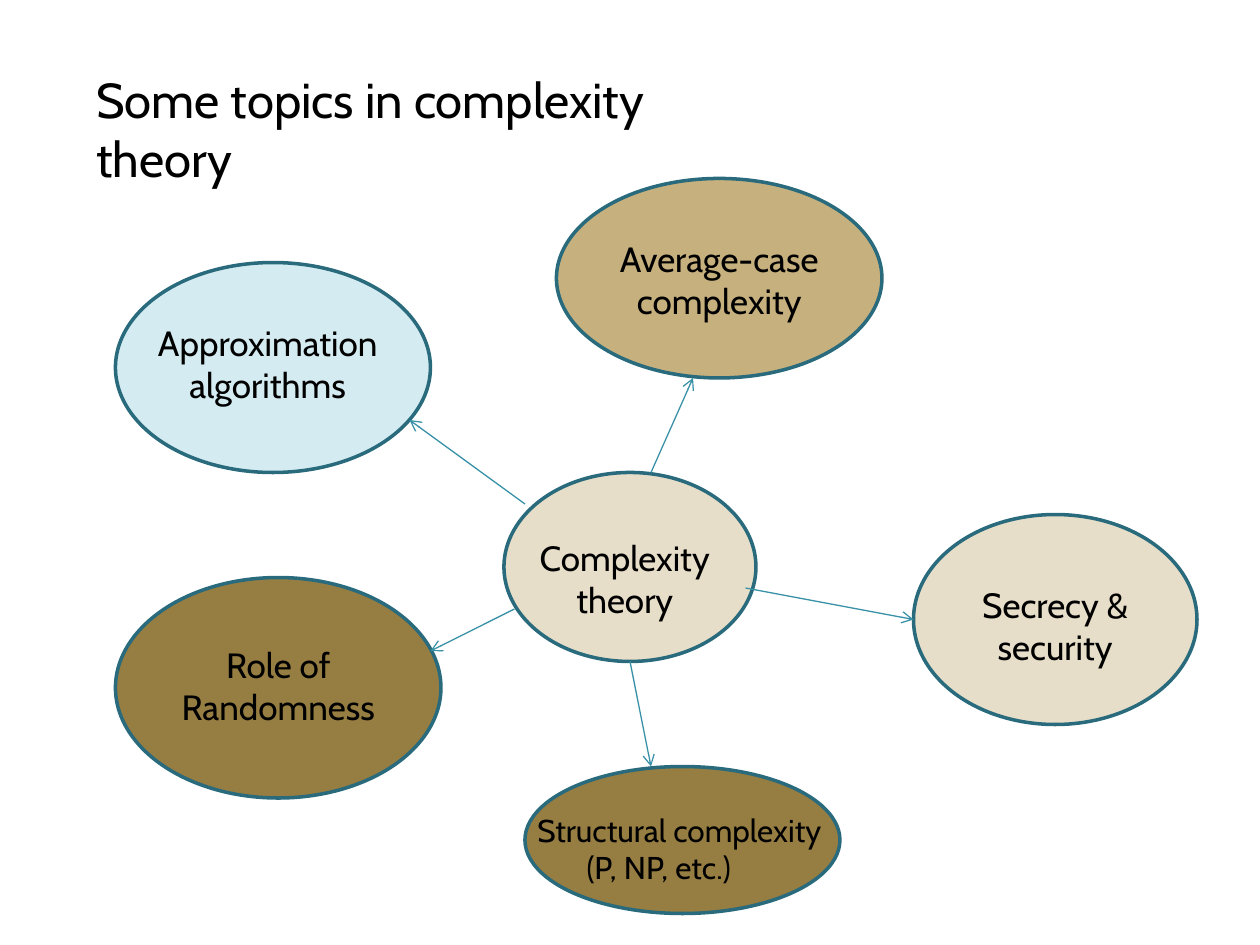
import pptx
import pptx.util
import pptx.dml.color
import pptx.enum.shapes
import pptx.enum.text
import pptx.oxml
import pptx.oxml.ns

PX = 914400 // 120  # 120 px to the inch
FONT = "Cabin"
COLORS = {
    "ink": "000000",
    "edge": "296B7C",
    "arrow": "3891A7",
    "cream": "E7DEC9",
    "tan": "C6B07E",
    "brown": "967D42",
    "ice": "D4EBF1",
}
CENTER = pptx.enum.text.PP_ALIGN.CENTER
LEFT = pptx.enum.text.PP_ALIGN.LEFT

# fill, oval box, label box inside the oval, label, arrow from the hub
TOPICS = [
    ("brown", (110, 550, 310, 210), (20, 57, 270, 133),
     "Role of Randomness", (490, 580, 410, 620)),
    ("ice", (110, 250, 300, 200), (20, 50, 250, 92),
     "Approximation algorithms", (500, 480, 390, 400)),
    ("tan", (530, 170, 310, 190), (20, 50, 270, 92),
     "Average-case complexity", (620, 450, 660, 360)),
    ("cream", (870, 490, 270, 200), (10, 60, 250, 92),
     "Secrecy & security", (710, 560, 870, 590)),
]


def emu(box):
    return [n * PX for n in box]


def color(name):
    return pptx.dml.color.RGBColor.from_string(COLORS[name])


def text(slide, box, lines, size, align=CENTER):
    """Add a text box; each line is a pair of words and left indent in px."""
    frame = slide.shapes.add_textbox(*emu(box)).text_frame
    frame.word_wrap = True
    for i, (words, indent) in enumerate(lines):
        para = frame.add_paragraph() if i else frame.paragraphs[0]
        para.alignment = align
        if indent:
            para._p.get_or_add_pPr().set("marL", str(indent * PX))
        run = para.add_run()
        run.text = words
        run.font.name = FONT
        run.font.size = pptx.util.Pt(size)
        run.font.color.rgb = color("ink")


def node(slide, box, fill, inner, lines, size=20, align=CENTER):
    """Add an oval with a label placed relative to the oval's corner."""
    oval = slide.shapes.add_shape(
        pptx.enum.shapes.MSO_SHAPE.OVAL, *emu(box))
    oval.shadow.inherit = False
    oval.fill.solid()
    oval.fill.fore_color.rgb = color(fill)
    oval.line.color.rgb = color("edge")
    oval.line.width = pptx.util.Pt(2)
    x, y, wide, high = inner
    text(slide, (box[0] + x, box[1] + y, wide, high), lines, size, align)


def arrow(slide, ends):
    link = slide.shapes.add_connector(
        pptx.enum.shapes.MSO_CONNECTOR.STRAIGHT, *emu(ends))
    link.line.color.rgb = color("arrow")
    link.line.width = pptx.util.Pt(0.75)
    tip = pptx.oxml.parse_xml(
        f'<a:tailEnd {pptx.oxml.ns.nsdecls("a")} type="arrow"/>')
    link.line._get_or_add_ln().append(tip)
    link._element.spPr.append(pptx.oxml.parse_xml(
        f'<a:effectLst {pptx.oxml.ns.nsdecls("a")}/>'))


def topic_map(slide):
    node(slide, (480, 450, 240, 180), "cream", (10, 55, 210, 92),
         [("Complexity theory", 0)])
    node(slide, (500, 730, 300, 140), "brown", (0, 36, 310, 85),
         [("Structural complexity", 0), ("(P, NP, etc.)", 47)], 18, LEFT)
    arrow(slide, (600, 630, 620, 730))
    for fill, box, inner, label, ends in TOPICS:
        node(slide, box, fill, inner, [(label, 0)])
        arrow(slide, ends)


def main():
    deck = pptx.Presentation()
    deck.slide_width, deck.slide_height = emu((1200, 900))
    slide = deck.slides.add_slide(deck.slide_layouts[6])
    topic_map(slide)
    text(slide, (80, 60, 680, 68),
         [("Some topics in complexity theory", 0)], 28, LEFT)
    deck.save("out.pptx")


if __name__ == "__main__":
    main()
